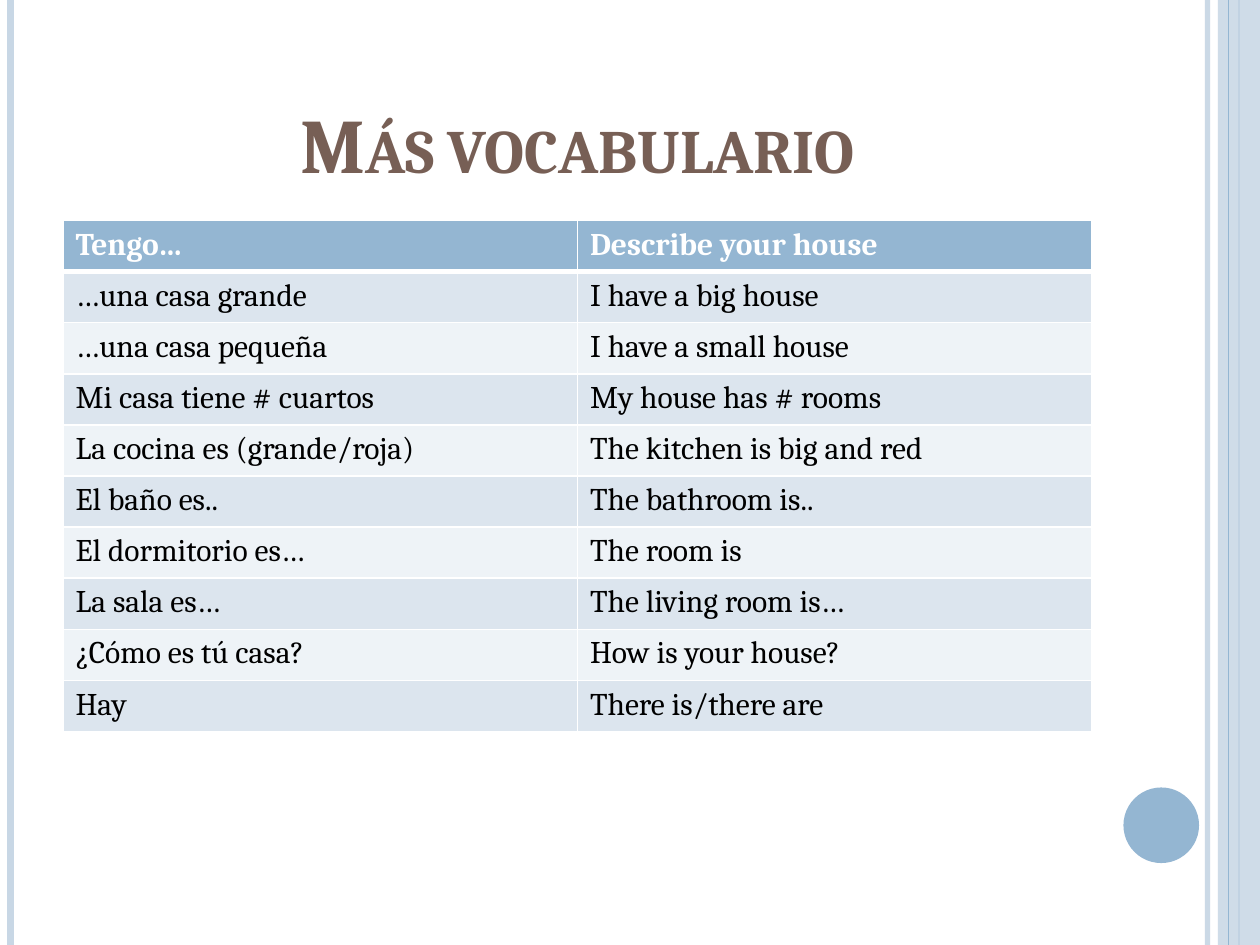
from lxml import etree
from pptx import Presentation
from pptx.dml.color import RGBColor
from pptx.enum import shapes, text
from pptx.oxml import ns
from pptx.util import Pt

FONT = "Cambria"
BLUE, PALE_BLUE, BROWN = "94B6D2", "C8D7E5", "775F55"
WHITE, BLACK = "FFFFFF", "000000"
BANDS = ("DCE5EE", "EEF3F7")
PAGE_WIDTH, PAGE_HEIGHT = 720, 540
ROW_HEIGHT = 29.2

VOCABULARY = [
    ("Tengo…", "Describe your house"),
    ("…una casa grande", "I have a big house"),
    ("…una casa pequeña", "I have a small house"),
    ("Mi casa tiene # cuartos", "My house has # rooms"),
    ("La cocina es (grande/roja)", "The kitchen is big and red"),
    ("El baño es..", "The bathroom is.."),
    ("El dormitorio es…", "The room is"),
    ("La sala es…", "The living room is…"),
    ("¿Cómo es tú casa?", "How is your house?"),
    ("Hay", "There is/there are"),
]


def set_color(target, color, opacity=100):
    """Give a fill a solid colour, with opacity in percent."""
    target.solid()
    target.fore_color.rgb = RGBColor.from_string(color)
    if opacity < 100:
        for element in target._xPr.iter(ns.qn("a:srgbClr")):
            etree.SubElement(element, ns.qn("a:alpha"), val=str(opacity * 1000))


def style_span(span, size, color, bold):
    span.font.name = FONT
    span.font.size = Pt(size)
    span.font.bold = bold
    set_color(span.font.fill, color)


def add_stripe(page, x, width, color, opacity=100):
    """Draw a line over the full height of the page."""
    stripe = page.shapes.add_connector(
        shapes.MSO_CONNECTOR.STRAIGHT, Pt(x), Pt(0), Pt(x), Pt(PAGE_HEIGHT))
    stripe.line.width = Pt(width)
    set_color(stripe.line.fill, color, opacity)
    etree.SubElement(stripe._element.spPr, ns.qn("a:effectLst"))


def add_block(page, kind, left, top, width, height, color, opacity=100):
    block = page.shapes.add_shape(kind, Pt(left), Pt(top), Pt(width), Pt(height))
    block.shadow.inherit = False
    block.line.fill.background()
    set_color(block.fill, color, opacity)


def add_title(page, wording):
    box = page.shapes.add_textbox(Pt(36), Pt(21.6), Pt(588), Pt(90))
    frame = box.text_frame
    frame.word_wrap = True
    frame.vertical_anchor = text.MSO_ANCHOR.BOTTOM
    frame.text = wording
    paragraph = frame.paragraphs[0]
    paragraph.alignment = text.PP_ALIGN.CENTER
    span = paragraph.runs[0]
    style_span(span, 44, BROWN, True)
    span.font._element.set("cap", "small")


def add_border(cell, side, width):
    properties = cell._tc.get_or_add_tcPr()
    border = etree.SubElement(properties, ns.qn(f"a:ln{side}"), w=str(Pt(width)))
    fill = etree.SubElement(border, ns.qn("a:solidFill"))
    etree.SubElement(fill, ns.qn("a:srgbClr"), val=WHITE)


def fill_cell(cell, wording, row):
    header = row == 0
    for side in "LRTB":
        under_header = (header and side == "B") or (row == 1 and side == "T")
        add_border(cell, side, 3 if under_header else 1)
    set_color(cell.fill, BLUE if header else BANDS[(row - 1) % 2])
    cell.text_frame.text = wording
    span = cell.text_frame.paragraphs[0].runs[0]
    style_span(span, 18, WHITE if header else BLACK, header)


def add_vocabulary_table(page, entries):
    frame = page.shapes.add_table(
        len(entries), len(entries[0]),
        Pt(36), Pt(126), Pt(588), Pt(ROW_HEIGHT * len(entries)))
    for row, entry in enumerate(entries):
        frame.table.rows[row].height = Pt(ROW_HEIGHT)
        for column, wording in enumerate(entry):
            fill_cell(frame.table.cell(row, column), wording, row)


def add_decoration(page):
    add_stripe(page, 690, 3, PALE_BLUE, 93)
    add_stripe(page, 6, 4.5, PALE_BLUE)
    add_stripe(page, 708, 1.5, BLUE)
    add_block(page, shapes.MSO_SHAPE.RECTANGLE,
              696, 0, PAGE_WIDTH - 696, PAGE_HEIGHT, PALE_BLUE, 87)
    add_stripe(page, 702, 0.75, BLUE)
    add_block(page, shapes.MSO_SHAPE.OVAL, 642, 450, 43.2, 43.2, BLUE)


def main():
    deck = Presentation()
    deck.slide_width, deck.slide_height = Pt(PAGE_WIDTH), Pt(PAGE_HEIGHT)
    page = deck.slides.add_slide(deck.slide_layouts[6])
    add_decoration(page)
    add_title(page, "Más vocabulario")
    add_vocabulary_table(page, VOCABULARY)
    deck.save("out.pptx")


if __name__ == "__main__":
    main()
